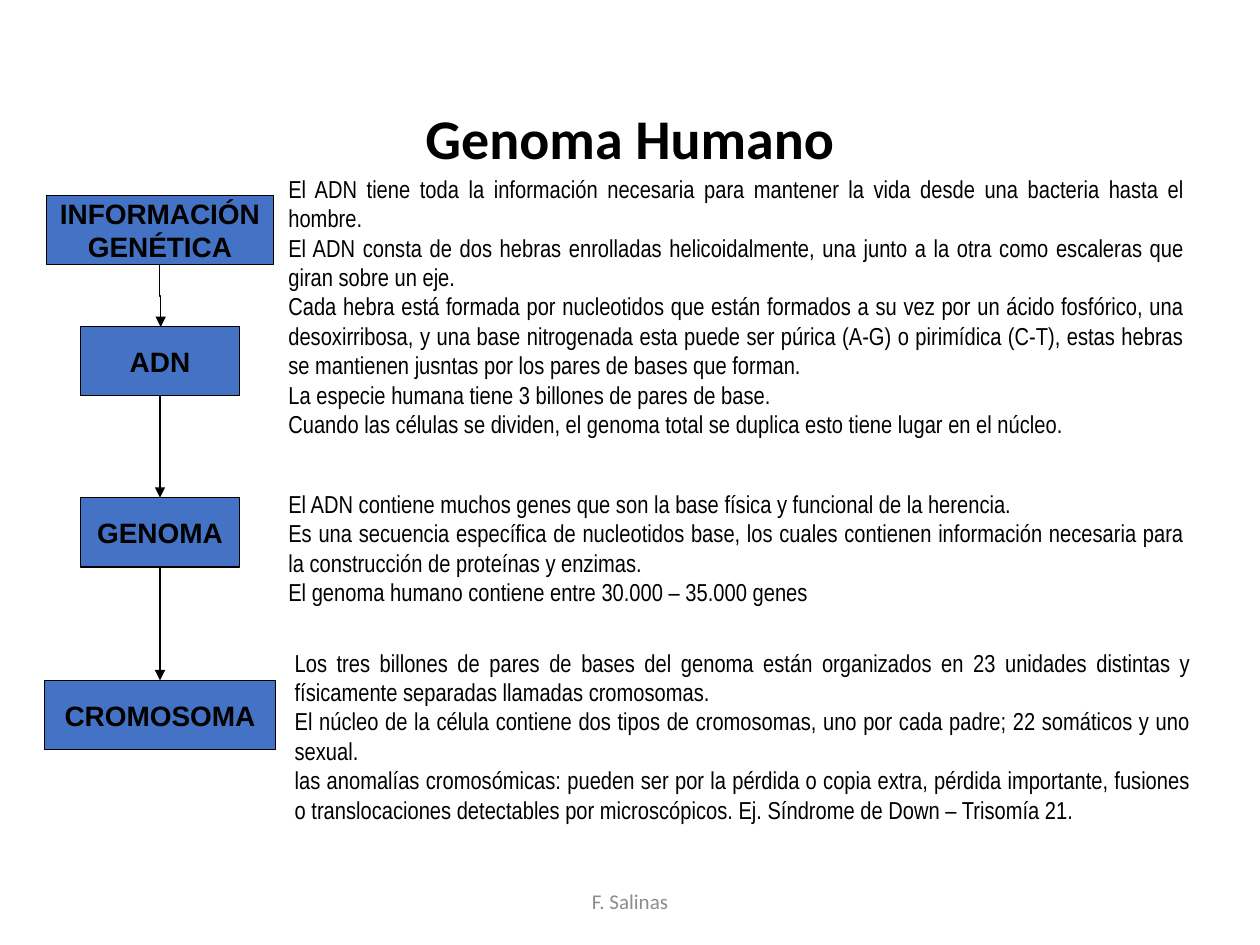
from itertools import pairwise

from lxml import etree
from pptx import Presentation
from pptx import util as u
from pptx.dml.color import RGBColor
from pptx.enum import shapes, text
from pptx.oxml.ns import qn

COLORS = {"box": "4472C4", "ink": "000000", "footer": "8C8C8C"}

presentation = Presentation()
presentation.slide_width, presentation.slide_height = u.Inches(10), u.Inches(7.5)
slide = presentation.slides.add_slide(presentation.slide_layouts[6])

# Grid of 100 columns by 75 rows
COLUMN = presentation.slide_width / 100
ROW = presentation.slide_height / 75


def grid(left, top, width, height):
    return [round(n * unit) for n, unit in zip((left, top, width, height), (COLUMN, ROW) * 2)]


def write(shape, lines, font, size, color="ink", bold=False,
          align=text.PP_ALIGN.CENTER, anchor=text.MSO_ANCHOR.MIDDLE, wrap=True):
    frame = shape.text_frame
    frame.text = "\n".join(lines)
    frame.word_wrap = wrap
    frame.vertical_anchor = anchor
    for paragraph in frame.paragraphs:
        paragraph.alignment = align
        for run in paragraph.runs:
            run.font.name, run.font.size, run.font.bold = font, u.Pt(size), bold
            run.font.color.rgb = RGBColor.from_string(COLORS[color])


footer = slide.shapes.add_textbox(*grid(33.1, 69.5, 33.8, 4))
write(footer, ["F. Salinas"], "Calibri", 12, "footer")

title = slide.shapes.add_textbox(*grid(6.9, 4, 86.2, 14.5))
write(title, ["Genoma Humano"], "Calibri", 32, bold=True)
title.text_frame.paragraphs[0].line_spacing = 0.9

# Chain of boxes, all centred on one axis
AXIS, BOX_HEIGHT = 12.7, 5.5
steps = [
    (["INFORMACIÓN", "GENÉTICA"], 15.5, 18),
    (["ADN"], 25.9, 12.6),
    (["GENOMA"], 39.5, 12.6),
    (["CROMOSOMA"], 54, 18.3),
]
boxes = []
for lines, top, width in steps:
    box = slide.shapes.add_shape(
        shapes.MSO_SHAPE.RECTANGLE, *grid(AXIS - width / 2, top, width, BOX_HEIGHT))
    box.shadow.inherit = False
    box.fill.solid()
    box.fill.fore_color.rgb = RGBColor.from_string(COLORS["box"])
    box.line.color.rgb = RGBColor.from_string(COLORS["ink"])
    box.line.width = u.Pt(0.75)
    write(box, lines, "Arial", 16, bold=True, wrap=False)
    boxes.append(box)

explanations = [
    (21.9, 13.3, 21.9, [
        "El ADN tiene toda la información necesaria para mantener la vida desde una bacteria "
        "hasta el hombre.",
        "El ADN consta de dos hebras enrolladas helicoidalmente, una junto a la otra como "
        "escaleras que giran sobre un eje.",
        "Cada hebra está formada por nucleotidos que están formados a su vez por un ácido "
        "fosfórico, una desoxirribosa, y una base nitrogenada esta puede ser púrica (A-G) o "
        "pirimídica (C-T), estas hebras se mantienen jusntas por los pares de bases que forman.",
        "La especie humana tiene 3 billones de pares de base.",
        "Cuando las células se dividen, el genoma total se duplica esto tiene lugar en el núcleo.",
    ]),
    (21.9, 38.3, 10.4, [
        "El ADN contiene muchos genes que son la base física y funcional de la herencia.",
        "Es una secuencia específica de nucleotidos base, los cuales contienen información "
        "necesaria para la construcción de proteínas y enzimas.",
        "El genoma humano contiene entre 30.000 – 35.000 genes",
    ]),
    (22.4, 50.9, 15, [
        "Los tres billones de pares de bases del genoma están organizados en 23 unidades "
        "distintas y físicamente separadas llamadas cromosomas.",
        "El núcleo de la célula contiene dos tipos de cromosomas, uno por cada padre; "
        "22 somáticos y uno sexual.",
        "las anomalías cromosómicas: pueden ser por la pérdida o copia extra, pérdida "
        "importante, fusiones o translocaciones detectables por microscópicos. "
        "Ej. Síndrome de Down – Trisomía 21.",
    ]),
]
for left, top, height, lines in explanations:
    explanation = slide.shapes.add_textbox(*grid(left, top, 73.1, height))
    write(explanation, lines, "Arial Narrow", 14,
          align=text.PP_ALIGN.JUSTIFY, anchor=text.MSO_ANCHOR.TOP)

for index, (upper, lower) in enumerate(pairwise(boxes)):
    start, end = upper.top + upper.height, lower.top
    if index == 0:
        # Elbow laid out sideways from right to left, then turned to run downwards
        middle, half = (start + end) // 2, (end - start) // 2
        axis = round(AXIS * COLUMN)
        arrow = slide.shapes.add_connector(
            shapes.MSO_CONNECTOR.ELBOW, axis + half, middle, axis - half, middle + u.Inches(0.01))
        arrow.element.spPr.find(qn("a:xfrm")).set("rot", str(270 * 60000))
    else:
        arrow = slide.shapes.add_connector(shapes.MSO_CONNECTOR.STRAIGHT, 0, start, 0, end)
        arrow.begin_connect(upper, 2)
        arrow.end_connect(lower, 0)
    arrow.line.color.rgb = RGBColor.from_string(COLORS["ink"])
    arrow.line.width = u.Pt(0.75)
    etree.SubElement(arrow.line._get_or_add_ln(), qn("a:tailEnd"), type="triangle")
    etree.SubElement(arrow.element.spPr, qn("a:effectLst"))

presentation.save("out.pptx")
